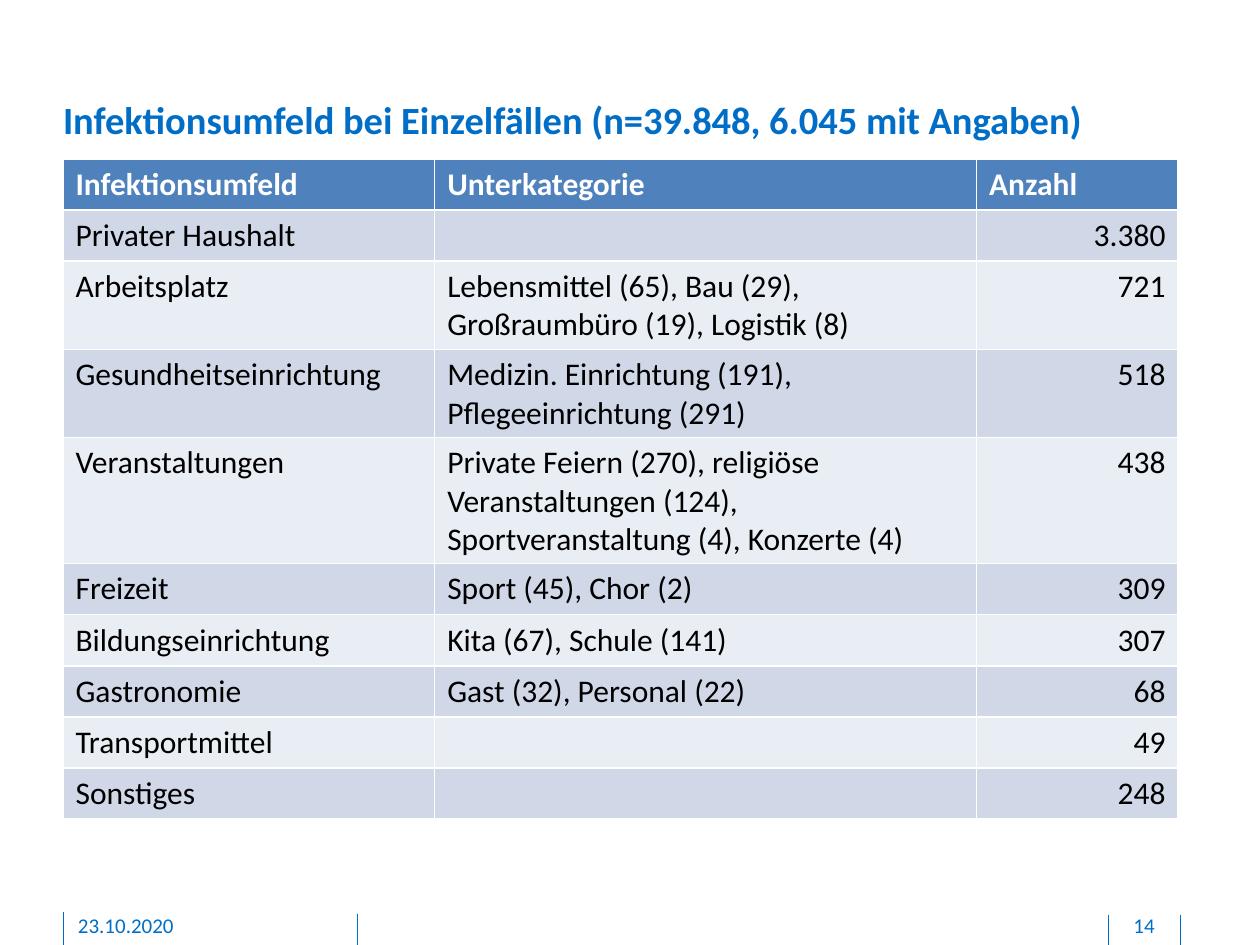
from dataclasses import dataclass

from lxml import etree
from pptx import Presentation
from pptx.dml.color import RGBColor
from pptx.enum import shapes, text
from pptx.oxml import ns
from pptx.util import Pt


@dataclass(frozen=True)
class Theme:
    font: str = "Calibri"
    blue: str = "006EC7"
    head: str = "4F81BD"
    bands: tuple = ("D0D8E8", "E9EDF4")
    white: str = "FFFFFF"
    black: str = "000000"
    title: int = 22
    body: int = 18
    foot: int = 12


THEME = Theme()
LEFT, WIDTH = 36, 637.2
COLS = (212.4, 309.6, 115.2)
ROW = 29.2
HEADS = ("Infektionsumfeld", "Unterkategorie", "Anzahl")
CASES = (
    ("Privater Haushalt", "", "3.380"),
    ("Arbeitsplatz", "Lebensmittel (65), Bau (29), Großraumbüro (19), Logistik (8)", "721"),
    ("Gesundheitseinrichtung", "Medizin. Einrichtung (191), Pflegeeinrichtung (291)", "518"),
    ("Veranstaltungen", "Private Feiern (270), religiöse Veranstaltungen (124), "
     "Sportveranstaltung (4), Konzerte (4)", "438"),
    ("Freizeit", "Sport (45), Chor (2)", "309"),
    ("Bildungseinrichtung", "Kita (67), Schule (141)", "307"),
    ("Gastronomie", "Gast (32), Personal (22)", "68"),
    ("Transportmittel", "", "49"),
    ("Sonstiges", "", "248"),
)
RULES = ((36, 521.3), (204.5, 522), (633.6, 522.7), (674.6, 522.7))


def write(frame, words, size, color, bold=False, align=text.PP_ALIGN.LEFT):
    para = frame.paragraphs[0]
    para.alignment = align
    if not words:
        para.font.size = Pt(size)
        return
    run = para.add_run()
    run.text = words
    font = run.font
    font.name, font.size, font.bold = THEME.font, Pt(size), bold
    font.color.rgb = RGBColor.from_string(color)


def inset(frame, base=0):
    frame.word_wrap = True
    frame.margin_left = frame.margin_top = frame.margin_right = 0
    frame.margin_bottom = Pt(base)


def add_title(slide, words):
    title = slide.shapes.title
    title.left, title.top = Pt(LEFT), Pt(54.7)
    title.width, title.height = Pt(WIDTH), Pt(26.6)
    frame = title.text_frame
    inset(frame)
    frame.auto_size = text.MSO_AUTO_SIZE.SHAPE_TO_FIT_TEXT
    write(frame, words, THEME.title, THEME.blue, bold=True)


def add_rule(slide, x, top):
    line = slide.shapes.add_connector(
        shapes.MSO_CONNECTOR.STRAIGHT, Pt(x), Pt(top), Pt(x), Pt(540))
    line.line.color.rgb = RGBColor.from_string(THEME.blue)
    line.line.width = Pt(0.5)
    etree.SubElement(line._element.spPr, ns.qn("a:effectLst"))


def add_foot(slide, words, x, width, align=text.PP_ALIGN.LEFT):
    box = slide.shapes.add_textbox(Pt(x), Pt(521.3), Pt(width), Pt(15.1))
    inset(box.text_frame, 3.6)
    write(box.text_frame, words, THEME.foot, THEME.blue, align=align)


def fill_cell(cell, words, fill, color, **style):
    cell.fill.solid()
    cell.fill.fore_color.rgb = RGBColor.from_string(fill)
    write(cell.text_frame, words, THEME.body, color, **style)


def add_cases(slide):
    count = len(CASES) + 1
    table = slide.shapes.add_table(
        count, len(COLS), Pt(LEFT), Pt(90.8), Pt(WIDTH), Pt(ROW * count)).table
    for col, width in zip(table.columns, COLS):
        col.width = Pt(width)
    for row in table.rows:
        row.height = Pt(ROW)
    for c, words in enumerate(HEADS):
        fill_cell(table.cell(0, c), words, THEME.head, THEME.white, bold=True)
    for r, case in enumerate(CASES):
        for c, words in enumerate(case):
            align = text.PP_ALIGN.RIGHT if c == 2 else text.PP_ALIGN.LEFT
            fill_cell(table.cell(r + 1, c), words, THEME.bands[r % 2],
                      THEME.black, align=align)


def main():
    deck = Presentation()
    deck.slide_width, deck.slide_height = Pt(720), Pt(540)
    slide = deck.slides.add_slide(deck.slide_layouts[5])
    for x, top in RULES:
        add_rule(slide, x, top)
    add_cases(slide)
    add_title(slide, "Infektionsumfeld bei Einzelfällen (n=39.848, 6.045 mit Angaben)")
    add_foot(slide, "23.10.2020", 44.6, 146.2)
    add_foot(slide, "14", 634.3, 38.9, align=text.PP_ALIGN.CENTER)
    deck.save("out.pptx")


if __name__ == "__main__":
    main()
